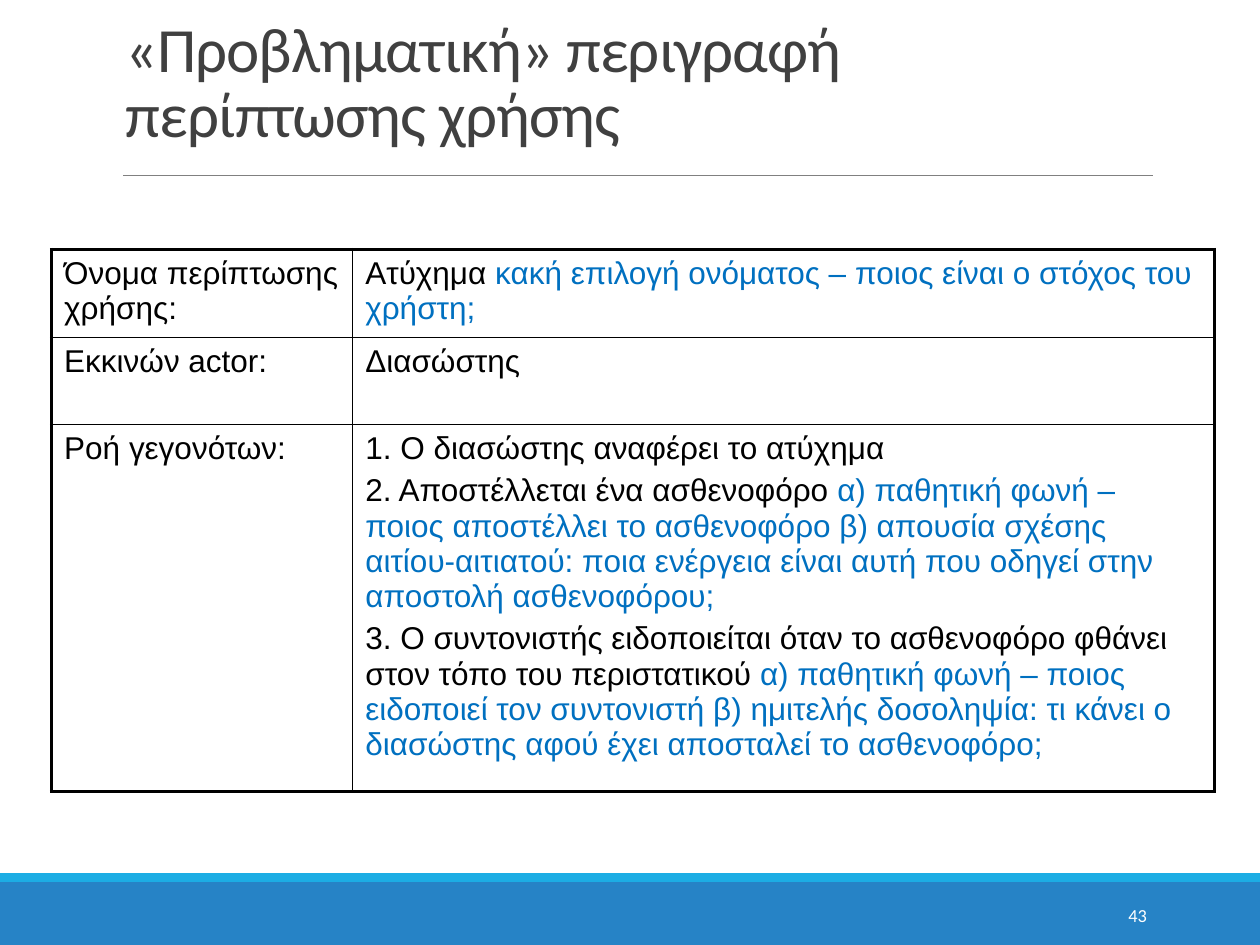
from dataclasses import dataclass

from lxml import etree
from pptx import Presentation, util as u
from pptx.dml.color import RGBColor
from pptx.enum import shapes, text
from pptx.oxml.ns import qn

COLORS = {
    "band": "2683C6",
    "stripe": "1CADE4",
    "rule": "808080",
    "title": "404040",
    "number": "FFFFFF",
    "body": "000000",
    "remark": "0070C0",
}
COLUMNS = (2.39, 6.84)
THIN, THICK = 1, 2.25


@dataclass(frozen=True)
class Box:
    left: float
    top: float
    width: float
    height: float

    def lengths(self) -> tuple:
        return tuple(u.Inches(v) for v in (self.left, self.top, self.width, self.height))


@dataclass(frozen=True)
class Step:
    plain: str
    remark: str = ""


@dataclass(frozen=True)
class Field:
    label: str
    steps: tuple[Step, ...]
    height: float


FIELDS = (
    Field("Όνομα περίπτωσης χρήσης:", (
        Step("Ατύχημα ", "κακή επιλογή ονόματος – ποιος είναι ο στόχος του χρήστη;"),
    ), 0.48),
    Field("Εκκινών actor:", (Step("Διασώστης"),), 0.69),
    Field("Ροή γεγονότων:", (
        Step("1. Ο διασώστης αναφέρει το ατύχημα"),
        Step("2. Αποστέλλεται ένα ασθενοφόρο ",
             "α) παθητική φωνή – ποιος αποστέλλει το ασθενοφόρο "
             "β) απουσία σχέσης αιτίου-αιτιατού: ποια ενέργεια είναι αυτή "
             "που οδηγεί στην αποστολή ασθενοφόρου;"),
        Step("3. Ο συντονιστής ειδοποιείται όταν το ασθενοφόρο φθάνει "
             "στον τόπο του περιστατικού ",
             "α) παθητική φωνή – ποιος ειδοποιεί τον συντονιστή "
             "β) ημιτελής δοσοληψία: τι κάνει ο διασώστης αφού έχει "
             "αποσταλεί το ασθενοφόρο;"),
    ), 1.65),
)


def rgb(name: str) -> RGBColor:
    return RGBColor.from_string(COLORS[name])


def add_run(p, content: str, size: float, font: str, color: str):
    r = p.add_run()
    r.text = content
    r.font.size = u.Pt(size)
    r.font.name = font
    r.font.color.rgb = rgb(color)
    return r


def add_bar(s, box: Box, color: str) -> None:
    sp = s.shapes.add_shape(shapes.MSO_SHAPE.RECTANGLE, *box.lengths())
    sp.shadow.inherit = False
    sp.fill.solid()
    sp.fill.fore_color.rgb = rgb(color)
    sp.line.fill.background()


def add_rule(s, left: float, right: float, y: float) -> None:
    sp = s.shapes.add_connector(
        shapes.MSO_CONNECTOR.STRAIGHT,
        u.Inches(left), u.Inches(y), u.Inches(right), u.Inches(y))
    sp.line.color.rgb = rgb("rule")
    sp.line.width = u.Pt(0.5)
    etree.SubElement(sp._element.spPr, qn("a:effectLst"))


def add_text(s, box: Box, anchor, align, content: str, size: float, color: str):
    tf = s.shapes.add_textbox(*box.lengths()).text_frame
    tf.word_wrap = True
    tf.vertical_anchor = anchor
    p = tf.paragraphs[0]
    p.alignment = align
    return p, add_run(p, content, size, "Calibri", color)


def set_borders(cell, widths: dict[str, float]) -> None:
    tc_pr = cell._tc.get_or_add_tcPr()
    for side, width in widths.items():
        ln = etree.SubElement(tc_pr, qn(f"a:ln{side}"), w=str(u.Pt(width)))
        fill = etree.SubElement(ln, qn("a:solidFill"))
        etree.SubElement(fill, qn("a:srgbClr"), val=COLORS["body"])


def fill_cell(cell, steps: tuple[Step, ...]) -> None:
    tf = cell.text_frame
    for i, step in enumerate(steps):
        p = tf.add_paragraph() if i else tf.paragraphs[0]
        p.space_before = u.Pt(4)
        add_run(p, step.plain, 18, "Arial", "body")
        if step.remark:
            add_run(p, step.remark, 18, "Arial", "remark")


def add_use_case(s, box: Box) -> None:
    frame = s.shapes.add_table(len(FIELDS), len(COLUMNS), *box.lengths())
    table = frame.table
    table.first_row = table.horz_banding = False
    for column, width in zip(table.columns, COLUMNS):
        column.width = u.Inches(width)
    last = len(FIELDS) - 1
    for i, field in enumerate(FIELDS):
        table.rows[i].height = u.Inches(field.height)
        for j, steps in enumerate(((Step(field.label),), field.steps)):
            cell = table.cell(i, j)
            fill_cell(cell, steps)
            set_borders(cell, {
                "L": THIN if j else THICK,
                "R": THICK if j else THIN,
                "T": THIN if i else THICK,
                "B": THICK if i == last else THIN,
            })
            cell.fill.background()
    frame.height = u.Inches(box.height)


def main() -> None:
    prs = Presentation()
    prs.slide_width, prs.slide_height = u.Inches(10), u.Inches(7.5)
    s = prs.slides.add_slide(prs.slide_layouts[6])
    add_bar(s, Box(0, 7, 10, 0.5), "band")
    add_bar(s, Box(0, 6.93, 10, 0.07), "stripe")
    add_rule(s, 0.98, 9.15, 1.39)
    p, r = add_text(s, Box(0.9, 0.31, 8.25, 0.93), text.MSO_ANCHOR.BOTTOM,
                    text.PP_ALIGN.LEFT, "«Προβληματική» περιγραφή περίπτωσης χρήσης",
                    36, "title")
    p.line_spacing = 0.85
    r.font._element.set("spc", "-50")
    add_text(s, Box(8.12, 7.06, 1.08, 0.4), text.MSO_ANCHOR.MIDDLE,
             text.PP_ALIGN.RIGHT, "43", 10.5, "number")
    add_use_case(s, Box(0.41, 1.98, 9.23, 4.31))
    prs.save("out.pptx")


if __name__ == "__main__":
    main()
